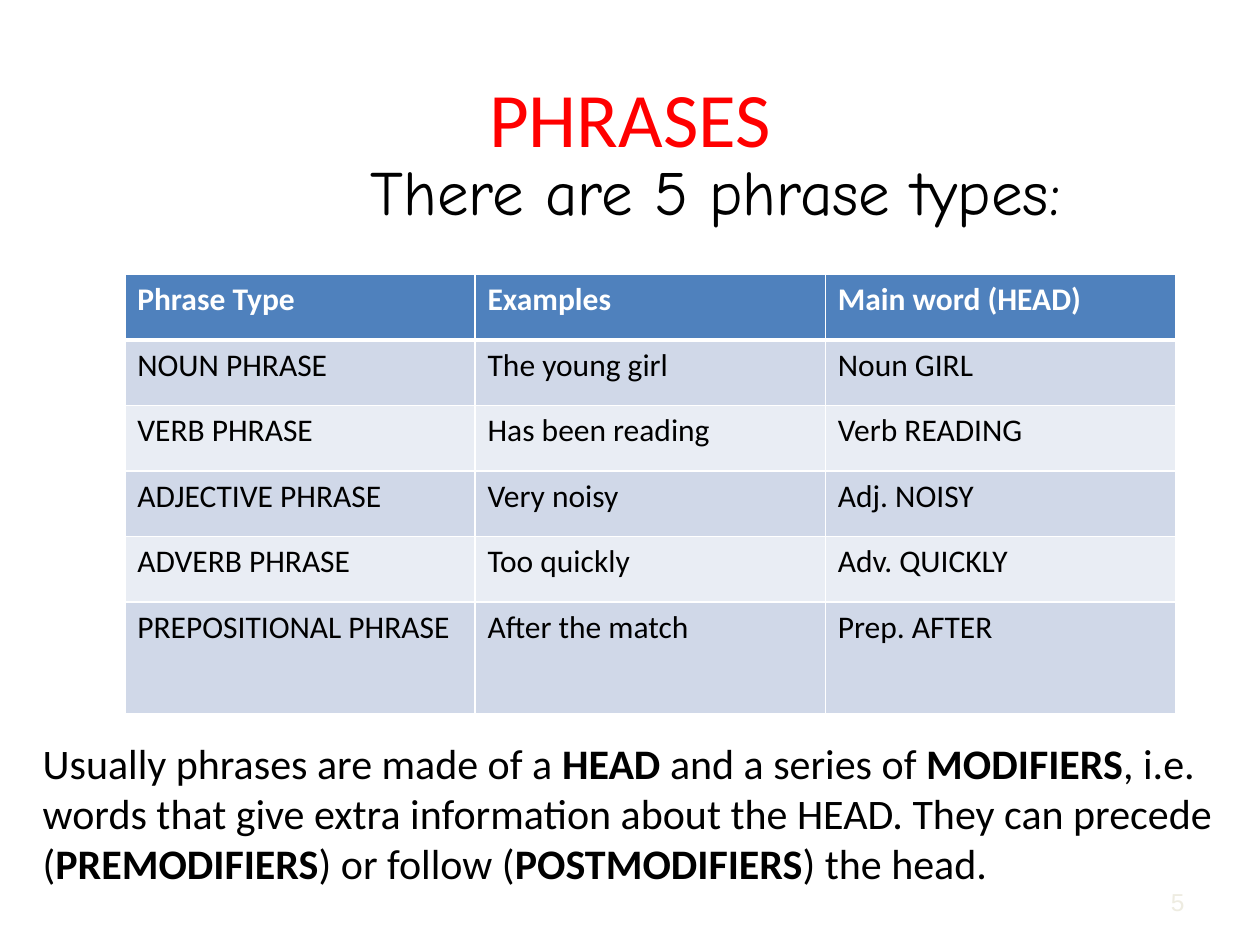
from lxml import etree
from pptx import Presentation
from pptx.dml.color import RGBColor
from pptx.enum import text
from pptx.oxml import ns
from pptx.util import Inches, Pt

RED = RGBColor(0xFF, 0x00, 0x00)
BLACK = RGBColor(0x00, 0x00, 0x00)
WHITE = RGBColor(0xFF, 0xFF, 0xFF)
HEADER_BLUE = RGBColor(0x4F, 0x81, 0xBD)
BANDS = (RGBColor(0xD0, 0xD8, 0xE8), RGBColor(0xE9, 0xED, 0xF4))
PALE = RGBColor(0xEE, 0xEC, 0xE1)

TITLE = "PHRASES"
SUBTITLE = "There are 5 phrase types:"
PHRASES = [
    ("Phrase Type", "Examples", "Main word (HEAD)"),
    ("NOUN PHRASE", "The young girl", "Noun GIRL"),
    ("VERB PHRASE", "Has been reading", "Verb READING"),
    ("ADJECTIVE PHRASE", "Very noisy", "Adj. NOISY"),
    ("ADVERB PHRASE", "Too quickly", "Adv. QUICKLY"),
    ("PREPOSITIONAL PHRASE", "After the match", "Prep. AFTER"),
]
EXPLANATION = [  # (words, bold)
    ("Usually phrases are made of a ", False),
    ("HEAD", True),
    (" and a series of ", False),
    ("MODIFIERS", True),
    (", i.e. words that give extra information about the HEAD. "
     "They can precede (", False),
    ("PREMODIFIERS", True),
    (") or follow (", False),
    ("POSTMODIFIERS", True),
    (") the head.", False),
]
PAGE_NUMBER = "5"

ROW_HEIGHTS = [0.52] * 5 + [0.89]
COLUMN_WIDTH = 2.78
SUBTITLE_INDENT = 1.36


def add_run(paragraph, words, size, color, bold=False, font="Calibri"):
    run = paragraph.add_run()
    run.text = words
    run.font.name = font
    run.font.size = Pt(size)
    run.font.bold = bold
    run.font.color.rgb = color


def place(shape, left, top, width, height):
    shape.left, shape.top = Inches(left), Inches(top)
    shape.width, shape.height = Inches(width), Inches(height)


def add_box(slide, left, top, width, height):
    """Add a wrapping text box and return its first paragraph."""
    box = slide.shapes.add_textbox(*map(Inches, (left, top, width, height)))
    box.text_frame.word_wrap = True
    return box.text_frame.paragraphs[0]


def set_borders(cell, bottom):
    """Draw white cell borders, 1 pt except for the given bottom width."""
    properties = cell._tc.get_or_add_tcPr()
    for side, width in (("L", 1), ("R", 1), ("T", 1), ("B", bottom)):
        line = etree.SubElement(properties, ns.qn(f"a:ln{side}"), w=str(Pt(width)))
        fill = etree.SubElement(line, ns.qn("a:solidFill"))
        etree.SubElement(fill, ns.qn("a:srgbClr"), val=str(WHITE))


def add_headings(slide):
    title, subtitle = slide.shapes.title, slide.placeholders[1]
    place(title, 0.5, 0.3, 9, 1.25)
    title.text_frame.vertical_anchor = text.MSO_ANCHOR.MIDDLE
    heading = title.text_frame.paragraphs[0]
    heading.alignment = text.PP_ALIGN.CENTER
    add_run(heading, TITLE, 44, RED)

    place(subtitle, 0, 1.23, 10, 4.88)
    subtitle.text_frame.auto_size = text.MSO_AUTO_SIZE.NONE
    line = subtitle.text_frame.paragraphs[0]
    line.alignment = text.PP_ALIGN.CENTER
    line.line_spacing = 0.9
    properties = line._p.get_or_add_pPr()
    properties.set("marL", str(Inches(SUBTITLE_INDENT)))
    properties.set("indent", "0")
    etree.SubElement(properties, ns.qn("a:buNone"))
    add_run(line, SUBTITLE, 36, BLACK, font="Comic Neue")


def add_phrase_table(slide):
    columns = len(PHRASES[0])
    table = slide.shapes.add_table(
        len(PHRASES), columns, Inches(0.99), Inches(2.18),
        Inches(COLUMN_WIDTH * columns), Inches(sum(ROW_HEIGHTS))).table
    for column in table.columns:
        column.width = Inches(COLUMN_WIDTH)
    for r, (entries, height) in enumerate(zip(PHRASES, ROW_HEIGHTS)):
        table.rows[r].height = Inches(height)
        header = r == 0
        for c, words in enumerate(entries):
            cell = table.cell(r, c)
            set_borders(cell, bottom=3 if header else 1)
            cell.fill.solid()
            cell.fill.fore_color.rgb = HEADER_BLUE if header else BANDS[(r - 1) % 2]
            add_run(cell.text_frame.paragraphs[0], words, 18,
                    WHITE if header else BLACK, bold=header)


def main():
    prs = Presentation()
    prs.slide_width, prs.slide_height = Inches(10), Inches(7.5)
    slide = prs.slides.add_slide(prs.slide_layouts[1])
    add_headings(slide)
    add_phrase_table(slide)

    explanation = add_box(slide, 0.24, 5.8, 9.49, 1.31)
    for words, bold in EXPLANATION:
        add_run(explanation, words, 24, BLACK, bold)

    number = add_box(slide, 7.17, 6.99, 2.33, 0.35)
    number.alignment = text.PP_ALIGN.RIGHT
    add_run(number, PAGE_NUMBER, 14, PALE, font="Arial")
    prs.save("out.pptx")


if __name__ == "__main__":
    main()
